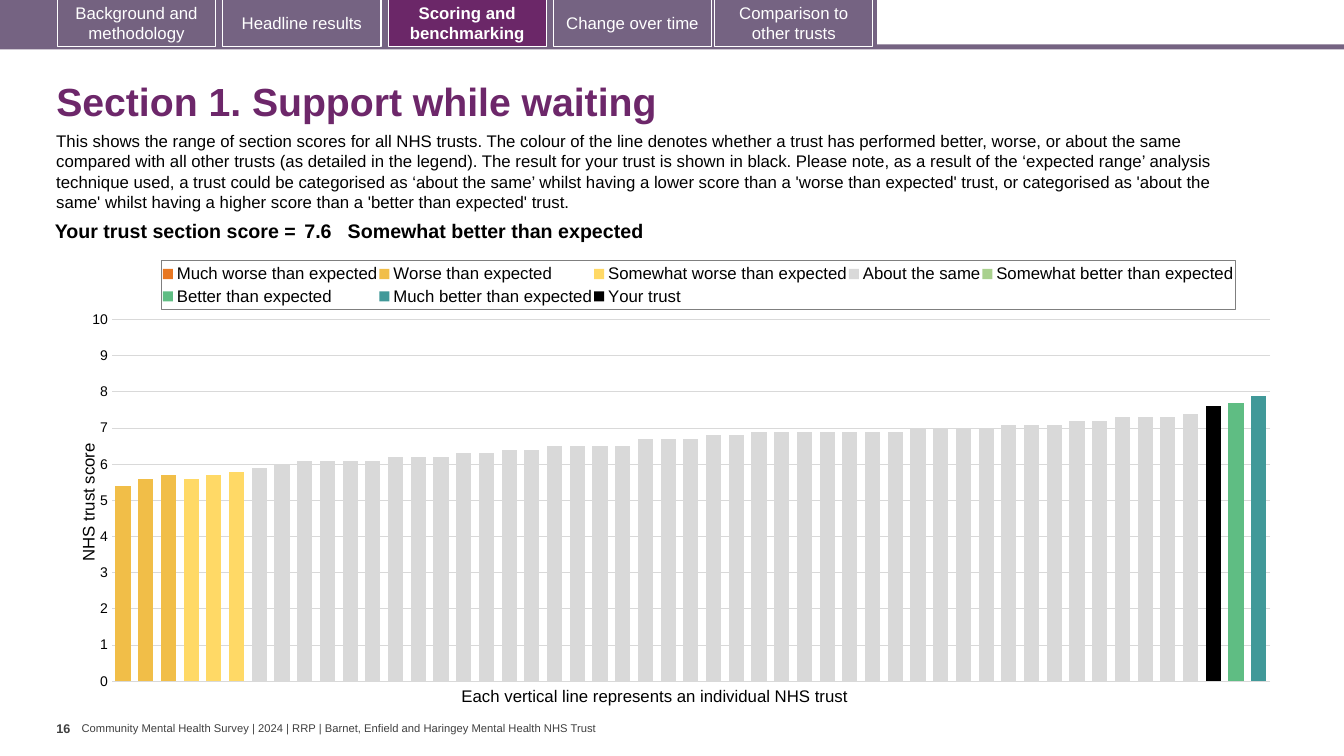
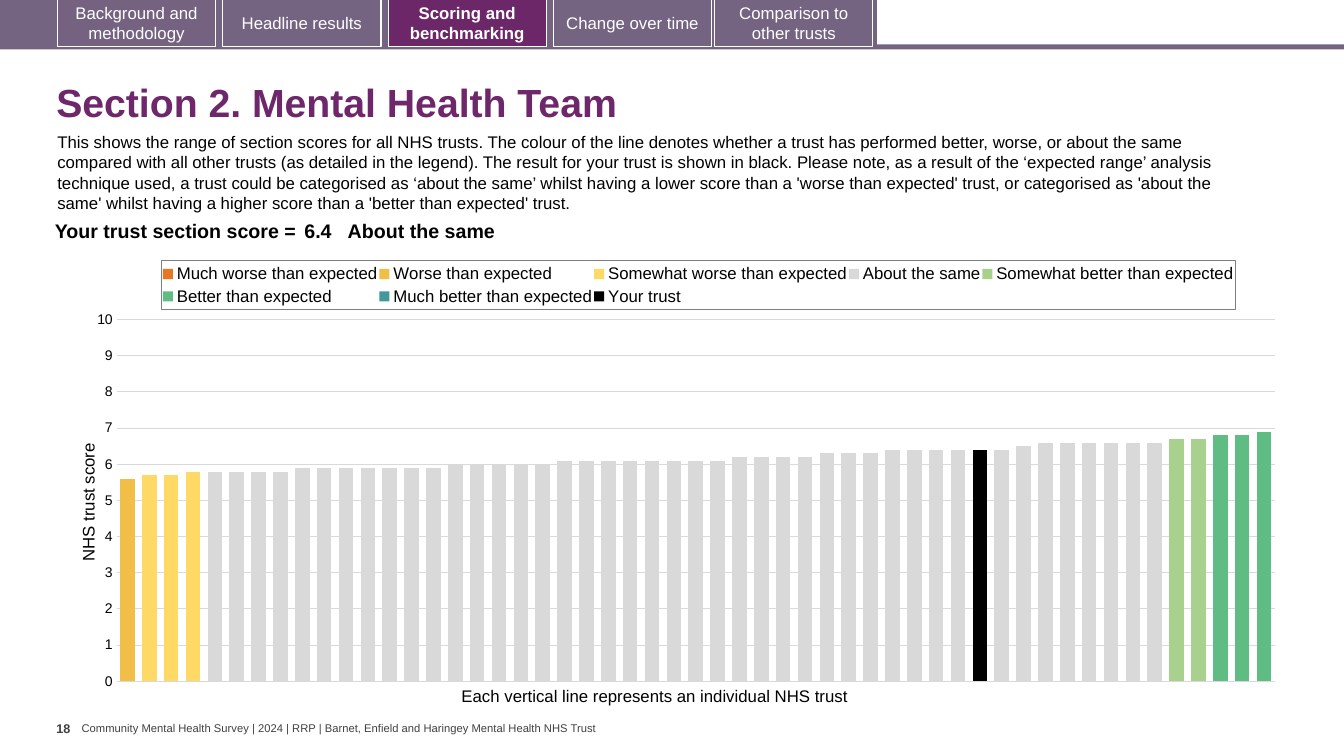
import copy
from dataclasses import dataclass

import pptx
import pptx.chart.data
import pptx.dml.color
import pptx.enum.chart
import pptx.enum.shapes
import pptx.enum.text
import pptx.oxml
import pptx.oxml.ns
import pptx.util

ALIGN = pptx.enum.text.PP_ALIGN
ANCHOR = pptx.enum.text.MSO_ANCHOR
COLUMNS, ROWS = 160, 90


@dataclass(frozen=True)
class Theme:
    font: str = "Arial"
    chart_font: str = "Calibri"
    bar: str = "756382"
    first_tab: str = "746280"
    active_tab: str = "6B2768"
    title: str = "6D276A"
    text: str = "000000"
    inverse: str = "FFFFFF"
    footer: str = "404040"
    gridline: str = "D9D9D9"
    legend_border: str = "7F7F7F"
    title_size: int = 28
    score_size: int = 14
    body_size: int = 12
    tick_size: int = 10
    page_size: int = 9
    footer_size: int = 8
    hairline: float = 0.75


# Expectation bands, in legend order
BANDS = {
    "Much worse than expected": "E87722",
    "Worse than expected": "F1BE48",
    "Somewhat worse than expected": "FFD966",
    "About the same": "D9D9D9",
    "Somewhat better than expected": "A9D18E",
    "Better than expected": "5FBD83",
    "Much better than expected": "419999",
}
OWN_TRUST = ("Your trust", "000000")

# Navigation tabs: label and left column
TABS = [
    ("Background and methodology", 6.84),
    ("Headline results", 26.52),
    ("Scoring and benchmarking", 46.2),
    ("Change over time", 65.88),
    ("Comparison to other trusts", 85.08),
]
ACTIVE_TAB = "Scoring and benchmarking"

INTRO = (
    "This shows the range of section scores for all NHS trusts. The colour of the line denotes "
    "whether a trust has performed better, worse, or about the same compared with all other trusts "
    "(as detailed in the legend). The result for your trust is shown in black. Please note, as a "
    "result of the ‘expected range’ analysis technique used, a trust could be categorised as ‘about "
    "the same’ whilst having a lower score than a 'worse than expected' trust, or categorised as "
    "'about the same' whilst having a higher score than a 'better than expected' trust."
)
FOOTER = ("Community Mental Health Survey | 2024 | RRP | "
          "Barnet, Enfield and Haringey Mental Health NHS Trust")

# Scores by band, lowest first; own_rank is the trust's place among all scores
SECTIONS = [
    dict(
        title="Section 1. Support while waiting", page="16", nudge=0, plot_left=0.036,
        verdict="Somewhat better than expected", own_rank=49,
        scores={
            "Worse than expected": [5.4, 5.6, 5.7],
            "Somewhat worse than expected": [5.6, 5.7, 5.8],
            "About the same": [5.9, 6] + [6.1] * 4 + [6.2] * 3 + [6.3] * 2 + [6.4] * 2
            + [6.5] * 4 + [6.7] * 3 + [6.8] * 2 + [6.9] * 7 + [7] * 4 + [7.1] * 3
            + [7.2] * 2 + [7.3] * 3 + [7.4],
            "Somewhat better than expected": [7.6],
            "Better than expected": [7.7],
            "Much better than expected": [7.9],
        },
    ),
    dict(
        title="Section 2. Mental Health Team", page="18", nudge=0.12, plot_left=0.04,
        verdict="About the same", own_rank=40,
        scores={
            "Worse than expected": [5.6],
            "Somewhat worse than expected": [5.7, 5.7, 5.8],
            "About the same": [5.8] * 4 + [5.9] * 7 + [6] * 5 + [6.1] * 8 + [6.2] * 4
            + [6.3] * 3 + [6.4] * 6 + [6.5] + [6.6] * 6,
            "Somewhat better than expected": [6.7, 6.7],
            "Better than expected": [6.8, 6.8, 6.9],
        },
    ),
]

# Second pair of axes, for the black column
SECOND_AXES = [
    """<c:valAx {ns}><c:axId val="9002"/>
    <c:scaling><c:orientation val="minMax"/><c:max val="10"/><c:min val="0"/></c:scaling>
    <c:delete val="0"/><c:axPos val="r"/><c:majorTickMark val="out"/><c:minorTickMark val="none"/>
    <c:tickLblPos val="none"/><c:spPr><a:ln><a:noFill/></a:ln></c:spPr>
    <c:crossAx val="9001"/><c:crosses val="max"/></c:valAx>""",
    """<c:catAx {ns}><c:axId val="9001"/>
    <c:scaling><c:orientation val="minMax"/></c:scaling><c:delete val="1"/><c:axPos val="b"/>
    <c:majorTickMark val="none"/><c:minorTickMark val="none"/><c:tickLblPos val="nextTo"/>
    <c:crossAx val="9002"/><c:crosses val="autoZero"/></c:catAx>""",
]


def rgb(value):
    return pptx.dml.color.RGBColor.from_string(value)


def chart_xml(template):
    return pptx.oxml.parse_xml(template.replace("{ns}", pptx.oxml.ns.nsdecls("c", "a")))


def ranked_scores(scores):
    return [score for band in BANDS for score in scores.get(band, [])]


def place(element, index, inner=False, **shares):
    """Give a chart part a fixed place, in shares of the chart's size."""
    for old in element.xpath("c:layout"):
        element.remove(old)
    rules = '<c:layoutTarget val="inner"/>' if inner else ""
    rules += "".join(f'<c:{axis}Mode val="edge"/>' for axis in "xy")
    rules += "".join(f'<c:{key} val="{share}"/>' for key, share in shares.items())
    element.insert(index, chart_xml(
        "<c:layout {ns}><c:manualLayout>" + rules + "</c:manualLayout></c:layout>"))


class Deck:
    def __init__(self, theme):
        self.theme = theme
        self.file = pptx.Presentation()
        self.file.slide_width = pptx.util.Inches(13.33)
        self.file.slide_height = pptx.util.Inches(7.5)
        self.slide = None

    def x(self, columns):
        return round(self.file.slide_width * columns / COLUMNS)

    def y(self, rows):
        return round(self.file.slide_height * rows / ROWS)

    def box(self, left, top, width, height):
        return self.x(left), self.y(top), self.x(width), self.y(height)

    def style(self, font, size, color=None, bold=False, name=None):
        font.name = name or self.theme.font
        font.size = pptx.util.Pt(size)
        font.bold = bold
        font.color.rgb = rgb(color or self.theme.text)

    def put_text(self, frame, text, size, color=None, bold=False, align=ALIGN.LEFT):
        frame.text = text
        paragraph = frame.paragraphs[0]
        paragraph.alignment = align
        self.style(paragraph.runs[0].font, size, color, bold)
        return paragraph

    def text(self, grid, text, size, color=None, bold=False, anchor=ANCHOR.TOP, insets=None):
        frame = self.slide.shapes.add_textbox(*self.box(*grid)).text_frame
        frame.word_wrap = True
        frame.vertical_anchor = anchor
        if insets is not None:
            frame.margin_left = frame.margin_right = 0
            frame.margin_top = frame.margin_bottom = self.y(insets)
        return self.put_text(frame, text, size, color, bold)

    def rect(self, grid, fill, outline=None):
        shape = self.slide.shapes.add_shape(
            pptx.enum.shapes.MSO_SHAPE.RECTANGLE, *self.box(*grid))
        shape.shadow.inherit = False
        shape.fill.solid()
        shape.fill.fore_color.rgb = rgb(fill)
        if outline:
            shape.line.color.rgb = rgb(outline)
            shape.line.width = pptx.util.Pt(self.theme.hairline)
        else:
            shape.line.fill.background()
        return shape

    def tab(self, label, left, fill):
        tab = self.rect((left, 0, 18.84, 5.52), fill, self.theme.inverse)
        tab.text_frame.word_wrap = True
        tab.text_frame.vertical_anchor = ANCHOR.MIDDLE
        self.put_text(tab.text_frame, label, self.theme.body_size, self.theme.inverse,
                      label == ACTIVE_TAB, ALIGN.CENTER)

    def new_slide(self, page):
        theme = self.theme
        self.slide = self.file.slides.add_slide(self.file.slide_layouts[6])
        # Footer and page number
        self.text((9.72, 85.92, 62.04, 1.56), FOOTER, theme.footer_size, theme.footer,
                  anchor=ANCHOR.MIDDLE, insets=0)
        self.text((6.72, 85.2, 3, 4.8), page, theme.page_size, theme.footer, True, insets=0.6)
        # Navigation band
        self.rect((0, 5.28, COLUMNS, 0.6), theme.bar)
        self.rect((0, 0, 104.4, 5.64), theme.bar)
        for index, (label, left) in enumerate(TABS):
            resting = theme.bar if index else theme.first_tab
            self.tab(label, left, theme.active_tab if label == ACTIVE_TAB else resting)

    def score_row(self, grid, widths, texts):
        table = self.slide.shapes.add_table(1, len(texts), *self.box(*grid)).table
        table.first_row = table.horz_banding = False
        for index, (width, text) in enumerate(zip(widths, texts)):
            table.columns[index].width = self.x(width)
            cell = table.cell(0, index)
            cell.fill.background()
            cell.margin_left = cell.margin_right = self.x(0.48 if index < 2 else 0)
            cell.margin_top = cell.margin_bottom = self.y(0.48)
            self.put_text(cell.text_frame, text, self.theme.score_size, bold=True,
                          align=ALIGN.LEFT if index else ALIGN.RIGHT)

    def score_chart(self, grid, scores, own_rank, plot_left):
        theme = self.theme
        # Each band takes up the ranks after the band before it
        ranked = ranked_scores(scores)
        data = pptx.chart.data.CategoryChartData(number_format="0.0")
        data.categories = [str(rank + 1) for rank in range(len(ranked))]
        start = 0
        for band in BANDS:
            values = scores.get(band, [])
            after = len(ranked) - start - len(values)
            data.add_series(band, [None] * start + values + [None] * after)
            start += len(values)
        data.add_series(OWN_TRUST[0], [score if rank == own_rank else None
                                       for rank, score in enumerate(ranked, 1)])
        chart = self.slide.shapes.add_chart(
            pptx.enum.chart.XL_CHART_TYPE.COLUMN_CLUSTERED, *self.box(*grid), data).chart
        chart.has_title = False
        self.style(chart.font, theme.tick_size, name=theme.chart_font)

        # Columns
        plot = chart.plots[0]
        plot.gap_width, plot.overlap, plot.vary_by_categories = 50, 100, False
        for series, color in zip(plot.series, [*BANDS.values(), OWN_TRUST[1]]):
            series.format.fill.solid()
            series.format.fill.fore_color.rgb = rgb(color)
            series.invert_if_negative = False

        # Axes
        chart.category_axis.visible = False
        axis = chart.value_axis
        axis.minimum_scale, axis.maximum_scale, axis.major_unit = 0, 10, 1
        axis.major_tick_mark = pptx.enum.chart.XL_TICK_MARK.NONE
        axis.format.line.fill.background()
        axis.major_gridlines.format.line.color.rgb = rgb(theme.gridline)
        axis.major_gridlines.format.line.width = pptx.util.Pt(theme.hairline)
        axis.tick_labels.number_format = "0"
        axis.tick_labels.number_format_is_linked = False
        self.style(axis.tick_labels.font, theme.tick_size)
        self.put_text(axis.axis_title.text_frame, "NHS trust score", theme.body_size,
                      align=ALIGN.CENTER)
        title = chart.element.xpath(".//c:valAx/c:title")[0]
        turn = title.xpath(".//a:bodyPr")[0]
        turn.set("rot", "-5400000")
        turn.set("vert", "horz")
        place(title, 1, x=0.006, y=0.427)

        # Legend
        chart.has_legend = True
        chart.legend.position = pptx.enum.chart.XL_LEGEND_POSITION.TOP
        chart.legend.include_in_layout = False
        self.style(chart.legend.font, theme.body_size)
        legend = chart.element.xpath(".//c:legend")[0]
        place(legend, 1, x=0.0765, y=0.026, w=0.877, h=0.11)
        legend.xpath("c:overlay")[0].addnext(chart_xml(
            '<c:spPr {ns}><a:ln w="9525"><a:solidFill><a:srgbClr val="' + theme.legend_border
            + '"/></a:solidFill></a:ln></c:spPr>'))

        # The trust's own column stands on the second axes, in front of the bands
        bands = chart.element.xpath(".//c:barChart")[0]
        own = copy.deepcopy(bands)
        for series in own.xpath("c:ser")[:-1]:
            own.remove(series)
        bands.remove(bands.xpath("c:ser")[-1])
        for axis_id, number in zip(own.xpath("c:axId"), ("9001", "9002")):
            axis_id.set("val", number)
        bands.addnext(own)
        for template in SECOND_AXES:
            chart.element.xpath(".//c:valAx")[-1].addnext(chart_xml(template))
        place(chart.element.xpath(".//c:plotArea")[0], 0, inner=True,
              x=plot_left, y=0.158, w=0.946, h=0.808)


def add_section(deck, title, page, nudge, plot_left, verdict, own_rank, scores):
    theme = deck.theme
    deck.new_slide(page)
    # Heading and explanation
    heading = deck.text((5.52, 8.04 + nudge, 149.88, 8.64), title, theme.title_size,
                        theme.title, True, ANCHOR.MIDDLE)
    heading.line_spacing = 0.9
    deck.text((5.52 + nudge, 15 + nudge, 145.56, 10.92), INTRO, theme.body_size)
    # Chart with its note
    deck.text((53.76, 81, 49.32, 3.6), "Each vertical line represents an individual NHS trust",
              theme.body_size)
    deck.score_chart((8.04, 29.64, 145.8, 53.28), scores, own_rank, plot_left)
    # Section score
    own_score = ranked_scores(scores)[own_rank - 1]
    deck.score_row((4.2, 25.8, 140.4, 3.72), (31.56, 5.64, 103.2),
                   ("Your trust section score =", str(own_score), verdict))


def main():
    deck = Deck(Theme())
    for section in SECTIONS:
        add_section(deck, **section)
    deck.file.save("out.pptx")


if __name__ == "__main__":
    main()
